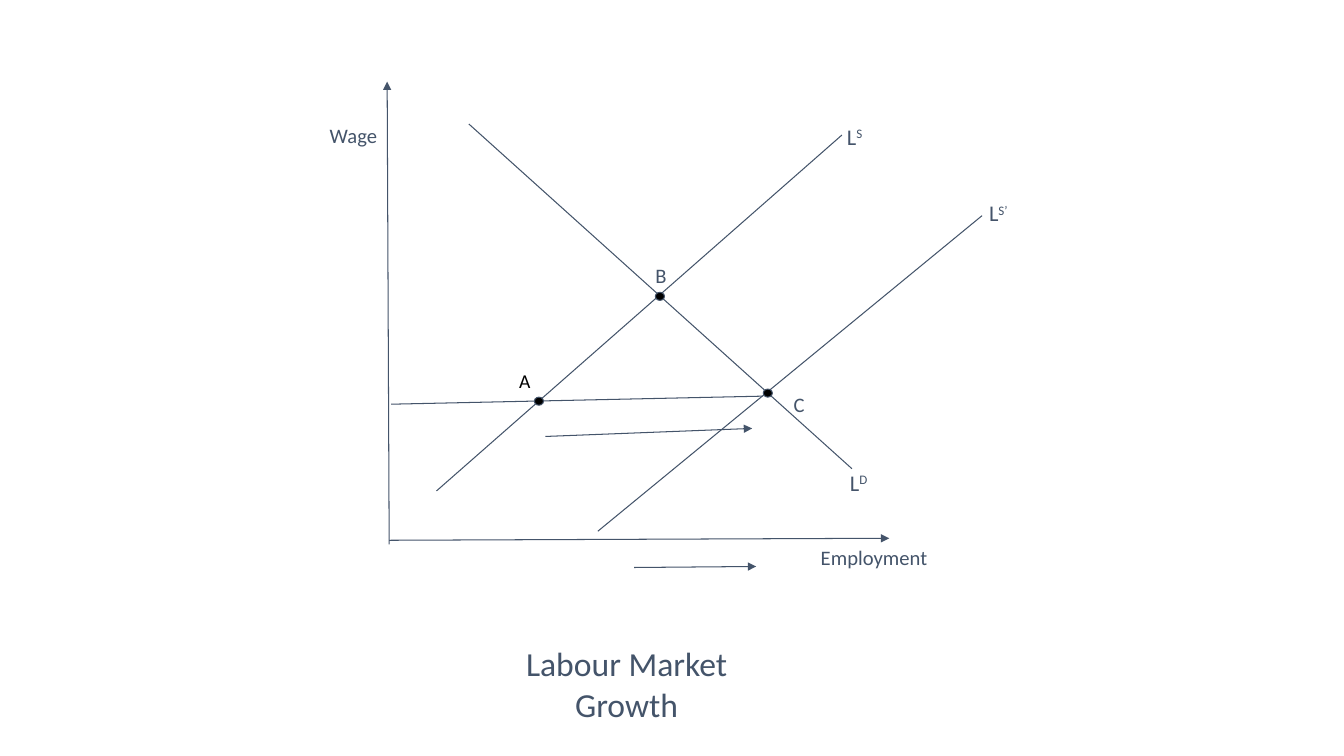
import pptx
import pptx.util
import pptx.dml.color
import pptx.enum.shapes
import pptx.enum.text
import pptx.oxml.ns
import lxml.etree

Inches = pptx.util.Inches
Pt = pptx.util.Pt
SLATE = pptx.dml.color.RGBColor(0x44, 0x54, 0x6A)
BLACK = pptx.dml.color.RGBColor(0, 0, 0)

prs = pptx.Presentation()
prs.slide_width, prs.slide_height = Inches(13.33), Inches(7.5)
s = prs.slides.add_slide(prs.slide_layouts[5])


def format_frame(tf, inset):
    frame_format = {
        "word_wrap": True,
        "auto_size": pptx.enum.text.MSO_AUTO_SIZE.NONE,
        "vertical_anchor": pptx.enum.text.MSO_ANCHOR.TOP,
        "margin_left": Inches(inset), "margin_right": Inches(inset),
        "margin_top": Inches(inset), "margin_bottom": Inches(inset),
    }
    for name, value in frame_format.items():
        setattr(tf, name, value)


def add_run(p, text, size, color):
    r = p.add_run()
    r.text = text
    for name, value in {"name": "Calibri", "size": Pt(size)}.items():
        setattr(r.font, name, value)
    r.font.color.rgb = color
    return r


# Title below the diagram
title = s.shapes.title
title.left, title.top = Inches(2.4), Inches(6.25)
title.width, title.height = Inches(7.63), Inches(0.63)
tf = title.text_frame
format_frame(tf, 0.13)
for i, text in enumerate(["Labour Market", "Growth"]):
    p = tf.add_paragraph() if i else tf.paragraphs[0]
    p.alignment = pptx.enum.text.PP_ALIGN.CENTER
    add_run(p, text, 24, SLATE)

# Axes, curves and shift arrows: x1, y1, x2, y2, arrowhead
lines = [
    (3.86, 5.4, 3.84, 0.81, True),    # wage axis
    (3.86, 5.36, 8.82, 5.34, True),   # employment axis
    (4.33, 4.87, 8.35, 1.34, False),  # labour supply
    (4.65, 1.23, 8.45, 4.65, False),  # labour demand
    (3.88, 4.01, 7.57, 3.93, False),  # wage level
    (5.93, 5.27, 9.74, 2.14, False),  # shifted supply
    (6.29, 5.63, 7.5, 5.62, True),    # employment shift
    (5.41, 4.33, 7.46, 4.25, True),   # supply shift
]
for x1, y1, x2, y2, arrow in lines:
    line = s.shapes.add_connector(
        pptx.enum.shapes.MSO_CONNECTOR.STRAIGHT,
        Inches(x1), Inches(y1), Inches(x2), Inches(y2))
    line.line.color.rgb = SLATE
    line.line.width = Pt(0.75)
    if arrow:
        lxml.etree.SubElement(line.line._get_or_add_ln(),
                              pptx.oxml.ns.qn("a:tailEnd"), type="triangle")
    lxml.etree.SubElement(line._element.spPr, pptx.oxml.ns.qn("a:effectLst"))

# Equilibrium points A, B and C
for x, y in [(5.3, 3.94), (6.5, 2.9), (7.57, 3.86)]:
    sp = s.shapes.add_shape(pptx.enum.shapes.MSO_SHAPE.OVAL,
                            Inches(x), Inches(y), Inches(0.09), Inches(0.08))
    sp.shadow.inherit = False
    sp.fill.solid()
    sp.fill.fore_color.rgb = BLACK
    sp.line.color.rgb = SLATE
    sp.line.width = Pt(0.75)

# Labels: text, superscript, left, top, width, height, size, colour, inset
labels = [
    ("Wage", "", 3.14, 1.09, 1.41, 0.29, 14.7, SLATE, 0.13),
    ("Employment", "", 8.01, 5.28, 1.68, 0.29, 14.7, SLATE, 0.13),
    ("L", "S", 8.27, 1.09, 0.71, 0.29, 16, SLATE, 0.13),
    ("L", "D", 8.3, 4.52, 0.71, 0.29, 16, SLATE, 0.13),
    ("L", "S’", 9.68, 1.85, 0.71, 0.29, 16, SLATE, 0.13),
    ("A", "", 5.05, 3.56, 0.3, 0.29, 14, BLACK, 0.1),
    ("B", "", 6.37, 2.48, 0.3, 0.42, 14.7, SLATE, 0.13),
    ("C", "", 7.74, 3.76, 0.71, 0.29, 14.7, SLATE, 0.13),
]
for text, superscript, x, y, w, h, size, color, inset in labels:
    tf = s.shapes.add_textbox(Inches(x), Inches(y), Inches(w), Inches(h)).text_frame
    format_frame(tf, inset)
    p = tf.paragraphs[0]
    add_run(p, text, size, color)
    if superscript:
        r = add_run(p, superscript, size, color)
        r._r.get_or_add_rPr().set("baseline", "30000")

prs.save("out.pptx")
